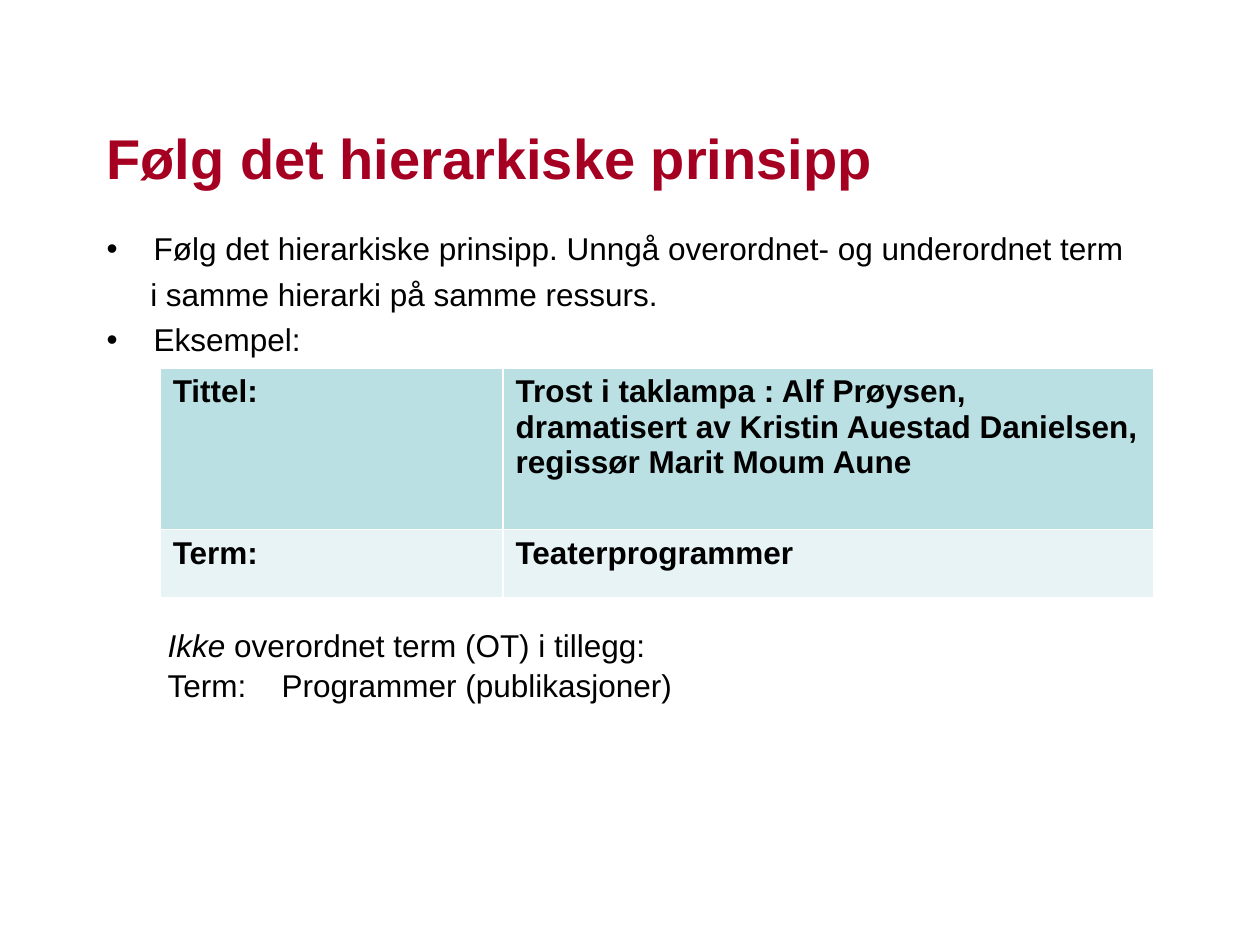
"""Build a slide on the hierarchical principle for subject terms."""
from lxml import etree
from pptx import Presentation
from pptx import util as u
from pptx.dml.color import RGBColor
from pptx.enum import text
from pptx.oxml import ns

RED = RGBColor(0xA5, 0x00, 0x21)
BLACK = RGBColor(0x00, 0x00, 0x00)
TEAL = RGBColor(0xBB, 0xE0, 0xE3)
PALE = RGBColor(0xE7, 0xF3, 0xF4)


def write(para, words, size=18, color=BLACK, bold=False, italic=False):
    span = para.add_run()
    span.text = words
    span.font.name = "Arial"
    span.font.size = u.Pt(size)
    span.font.color.rgb = color
    span.font.bold = bold
    span.font.italic = italic


def add_box(page, left, top, width, height):
    box = page.shapes.add_textbox(u.Cm(left), u.Cm(top), u.Cm(width), u.Cm(height))
    box.text_frame.word_wrap = True
    return box.text_frame


deck = Presentation()
deck.slide_width = u.Cm(25.4)
deck.slide_height = u.Cm(19.05)
page = deck.slides.add_slide(deck.slide_layouts[6])

title = add_box(page, 1.9, 1.7, 22.23, 2.92)
title.vertical_anchor = text.MSO_ANCHOR.MIDDLE
write(title.paragraphs[0], "Følg det hierarkiske prinsipp", size=32, color=RED, bold=True)

body = add_box(page, 1.9, 4.5, 22, 2.9)
lines = [
    ("Følg det hierarkiske prinsipp. Unngå overordnet- og underordnet term", True),
    ("i samme hierarki på samme ressurs.", False),
    ("Eksempel:", True),
]
for index, (words, bulleted) in enumerate(lines):
    para = body.paragraphs[0] if index == 0 else body.add_paragraph()
    props = para._p.get_or_add_pPr()
    props.set("marL", str(u.Cm(0.95 if bulleted else 0.88)))
    if index:
        para.space_before = u.Pt(4.4)
    if bulleted:
        props.set("indent", str(-u.Cm(0.95)))
        etree.SubElement(props, ns.qn("a:buFont")).set("typeface", "Arial")
        etree.SubElement(props, ns.qn("a:buChar")).set("char", "•")
    write(para, words)

table = page.shapes.add_table(2, 2, u.Cm(3.23), u.Cm(7.42), u.Cm(20.02), u.Cm(4.62)).table
for column, width in zip(table.columns, (6.91, 13.11)):
    column.width = u.Cm(width)
rows = [
    (3.25, TEAL, "Tittel:", "Trost i taklampa : Alf Prøysen, dramatisert av Kristin Auestad "
     "Danielsen, regissør Marit Moum Aune"),
    (1.37, PALE, "Term:", "Teaterprogrammer"),
]
for row, (height, fill, *entries) in zip(table.rows, rows):
    row.height = u.Cm(height)
    for cell, words in zip(row.cells, entries):
        cell.fill.solid()
        cell.fill.fore_color.rgb = fill
        write(cell.text_frame.paragraphs[0], words, bold=True)

note = add_box(page, 3.13, 12.5, 20, 1.9)
para = note.paragraphs[0]
write(para, "Ikke ", italic=True)
write(para, "overordnet term (OT) i tillegg:")
para = note.add_paragraph()
para.space_before = u.Pt(1)
tabs = etree.SubElement(para._p.get_or_add_pPr(), ns.qn("a:tabLst"))
etree.SubElement(tabs, ns.qn("a:tab"), pos=str(u.Cm(2.3)), algn="l")
write(para, "Term:\tProgrammer (publikasjoner)")

deck.save("out.pptx")
